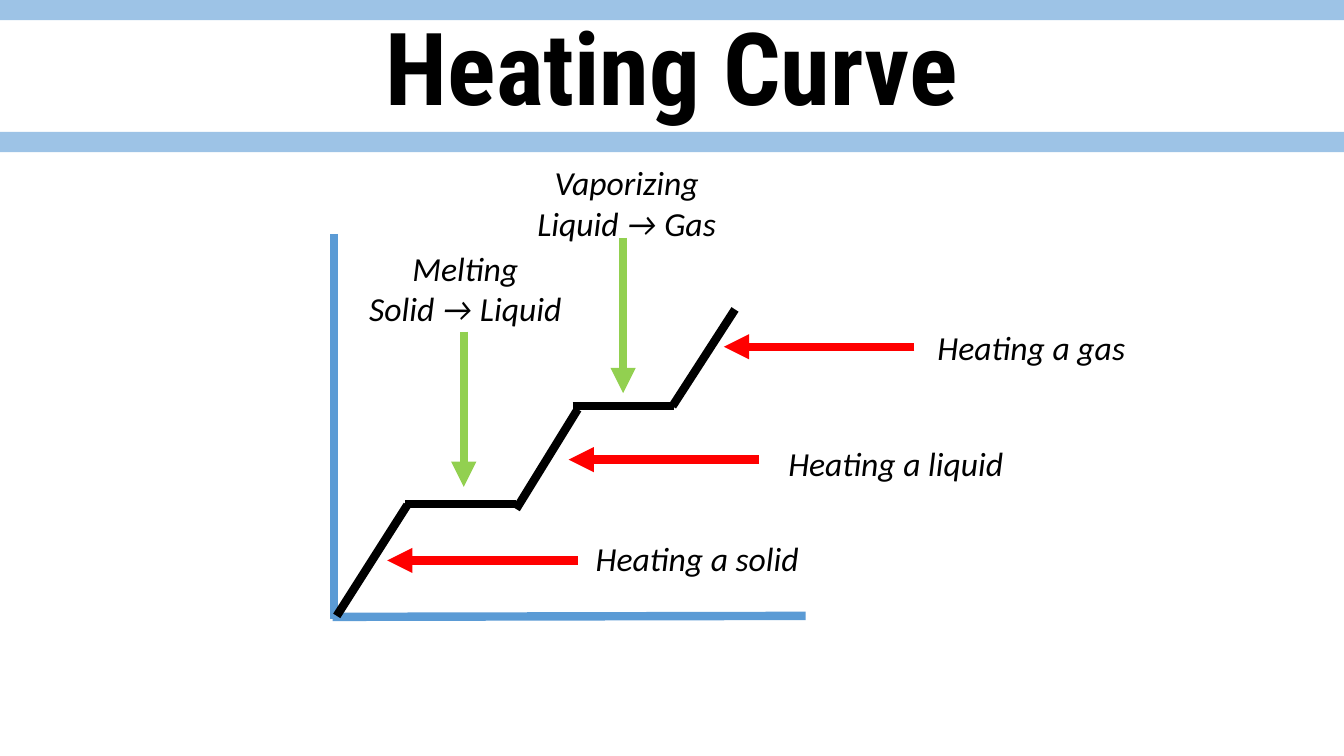
from dataclasses import dataclass

from lxml.etree import SubElement
from pptx import Presentation
from pptx.dml.color import RGBColor
from pptx.enum.shapes import MSO_CONNECTOR as Connector, MSO_SHAPE as Shape
from pptx.enum.text import MSO_AUTO_SIZE as AutoSize, PP_ALIGN as Align
from pptx.oxml.ns import qn
from pptx.slide import Slide
from pptx.util import Inches, Pt

COLORS = {
    "band": "9DC3E6",
    "axis": "5B9BD5",
    "curve": "000000",
    "heating": "FF0000",
    "change": "92D050",
    "text": "000000",
}
SLIDE_W, SLIDE_H = 13.33, 7.5
BAND_H = 0.2
TITLE_H = 1.31
LINE_PT = 6


@dataclass
class Line:
    x1: float
    y1: float
    x2: float
    y2: float
    color: str
    arrow: bool = False


@dataclass
class Label:
    x: float
    y: float
    w: float
    h: float
    lines: list[str]
    align: Align = Align.LEFT
    size: int = 24
    font: str = "Calibri"
    bold: bool = False
    italic: bool = True


def rgb(name: str) -> RGBColor:
    return RGBColor.from_string(COLORS[name])


def draw_band(s: Slide, y: float) -> None:
    sp = s.shapes.add_shape(
        Shape.RECTANGLE, 0, Inches(y), Inches(SLIDE_W), Inches(BAND_H))
    sp.shadow.inherit = False
    sp.fill.solid()
    sp.fill.fore_color.rgb = rgb("band")
    sp.line.fill.background()


def draw_line(s: Slide, line: Line) -> None:
    cxn = s.shapes.add_connector(
        Connector.STRAIGHT, Inches(line.x1), Inches(line.y1),
        Inches(line.x2), Inches(line.y2))
    cxn.line.color.rgb = rgb(line.color)
    cxn.line.width = Pt(LINE_PT)
    if line.arrow:
        SubElement(cxn.line._get_or_add_ln(), qn("a:tailEnd"), type="triangle")
    SubElement(cxn._element.spPr, qn("a:effectLst"))


def draw_label(s: Slide, label: Label) -> None:
    box = s.shapes.add_textbox(
        Inches(label.x), Inches(label.y), Inches(label.w), Inches(label.h))
    tf = box.text_frame
    tf.word_wrap = True
    tf.auto_size = AutoSize.SHAPE_TO_FIT_TEXT
    tf.text = "\n".join(label.lines)
    for p in tf.paragraphs:
        p.alignment = label.align
        p.font.name = label.font
        p.font.size = Pt(label.size)
        p.font.bold = label.bold
        p.font.italic = label.italic
        p.font.color.rgb = rgb("text")


def heating_arrow(tip_x: float, y: float) -> Line:
    return Line(tip_x + 1.89, y, tip_x, y, "heating", arrow=True)


def change_arrow(x: float, top: float) -> Line:
    return Line(x, top, x, top + 1.54, "change", arrow=True)


def heating_label(x: float, y: float, text: str) -> Label:
    return Label(x, y, 2.96, 0.5, [text])


def change_label(x: float, y: float, name: str, phases: str) -> Label:
    return Label(x, y, 2.19, 0.91, [name, phases], Align.CENTER)


TITLE = Label(0, 0, SLIDE_W, TITLE_H, ["Heating Curve"], Align.CENTER,
              size=72, font="Roboto Condensed", bold=True, italic=False)

LINES = [
    # Axes
    Line(3.31, 2.32, 3.31, 6.14, "axis"),
    Line(7.99, 6.11, 3.3, 6.12, "axis"),
    # Curve, from solid to gas
    Line(3.34, 6.11, 4.04, 5.01, "curve"),
    Line(4.02, 5, 5.12, 5, "curve"),
    Line(5.12, 5.05, 5.73, 4.06, "curve"),
    Line(5.68, 4.03, 6.68, 4.03, "curve"),
    Line(6.67, 4.03, 7.29, 3.07, "curve"),
    # Arrows to the slopes and plateaus
    heating_arrow(3.84, 5.56),
    heating_arrow(5.64, 4.56),
    heating_arrow(7.18, 3.44),
    change_arrow(4.6, 3.29),
    change_arrow(6.18, 2.36),
]

LABELS = [
    heating_label(5.81, 5.29, "Heating a solid"),
    heating_label(7.72, 4.34, "Heating a liquid"),
    heating_label(9.2, 3.19, "Heating a gas"),
    change_label(3.52, 2.41, "Melting", "Solid → Liquid"),
    change_label(5.12, 1.56, "Vaporizing", "Liquid → Gas"),
]


def main() -> None:
    prs = Presentation()
    prs.slide_width, prs.slide_height = Inches(SLIDE_W), Inches(SLIDE_H)
    s = prs.slides.add_slide(prs.slide_layouts[6])

    # Title between two bands
    for y in (0, TITLE_H):
        draw_band(s, y)
    draw_label(s, TITLE)

    # Diagram
    for line in LINES:
        draw_line(s, line)
    for label in LABELS:
        draw_label(s, label)

    prs.save("out.pptx")


if __name__ == "__main__":
    main()
